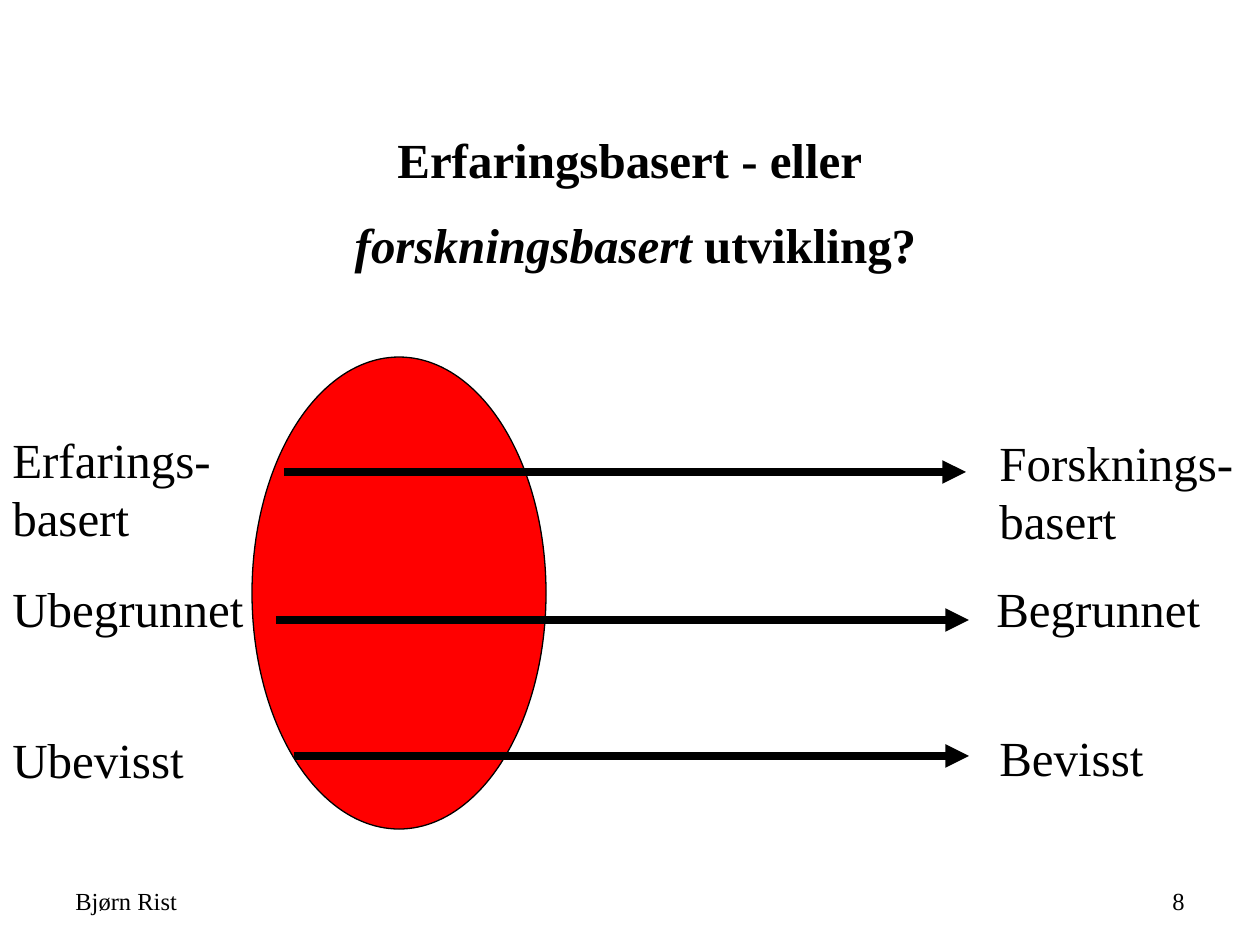
"""Build the slide on experience-based versus research-based development."""
from lxml.etree import SubElement
from pptx import Presentation
from pptx.dml.color import RGBColor
from pptx.enum.shapes import MSO_CONNECTOR as Conn, MSO_SHAPE as Shape
from pptx.enum.text import MSO_ANCHOR as Anchor, PP_ALIGN as Align
from pptx.oxml.ns import qn
from pptx.util import Pt

PX = 914400 // 126
FONT = "Times New Roman"
BLACK, RED = "000000", "FF0000"
TITLE = [
    [("Erfaringsbasert - eller ", False)],
    [("forskningsbasert ", True), ("utvikling?", False)],
]
LABELS = [
    ("Erfarings-basert", 0, 423, 252, 130),
    ("Ubegrunnet", 0, 572, 294, 72),
    ("Ubevisst", 0, 723, 294, 72),
    ("Forsknings-basert", 987, 426, 294, 130),
    ("Begrunnet", 984, 572, 294, 72),
    ("Bevisst", 987, 721, 294, 72),
]
ARROWS = [(284, 966, 472), (276, 969, 620), (294, 969, 756)]
FOOTS = [("Bjørn Rist", 63, Align.LEFT), ("8", 903, Align.RIGHT)]


def px(*nums):
    return [n * PX for n in nums]


def color(code):
    return RGBColor.from_string(code)


def style(run, size, bold=False, ital=False):
    font = run.font
    font.name, font.size = FONT, Pt(size)
    font.bold, font.italic = bold, ital
    font.color.rgb = color(BLACK)


def label(slide, text, box, size, align=Align.LEFT, anchor=Anchor.TOP):
    frame = slide.shapes.add_textbox(*px(*box)).text_frame
    frame.word_wrap = True
    frame.vertical_anchor = anchor
    frame.text = text
    para = frame.paragraphs[0]
    para.alignment = align
    style(para.runs[0], size)


def title(slide):
    head = slide.shapes.title
    head.left, head.top, head.width, head.height = px(95, 123, 1081, 160)
    frame = head.text_frame
    frame.word_wrap = True
    frame.vertical_anchor = Anchor.TOP
    for i, parts in enumerate(TITLE):
        para = frame.add_paragraph() if i else frame.paragraphs[0]
        para.alignment = Align.CENTER
        para.space_before = Pt(15 if i else 0)
        for text, ital in parts:
            run = para.add_run()
            run.text = text
            style(run, 28, True, ital)


def oval(slide):
    shape = slide.shapes.add_shape(Shape.OVAL, *px(252, 357, 294, 472))
    shape.shadow.inherit = False
    shape.fill.solid()
    shape.fill.fore_color.rgb = color(RED)
    shape.line.color.rgb = color(BLACK)
    shape.line.width = Pt(0.75)


def arrow(slide, start, end, y):
    link = slide.shapes.add_connector(Conn.STRAIGHT, *px(start, y, end, y))
    link.line.color.rgb = color(BLACK)
    link.line.width = Pt(4.5)
    SubElement(link.line._get_or_add_ln(), qn("a:tailEnd"), type="triangle")
    SubElement(link._element.spPr, qn("a:effectLst"))


def main():
    deck = Presentation()
    deck.slide_width, deck.slide_height = px(1260, 945)
    slide = deck.slides.add_slide(deck.slide_layouts[5])
    title(slide)
    oval(slide)
    for text, *box in LABELS:
        label(slide, text, box, 28)
    for ends in ARROWS:
        arrow(slide, *ends)
    for text, left, align in FOOTS:
        label(slide, text, (left, 876, 294, 50), 14, align, Anchor.MIDDLE)
    deck.save("out.pptx")


if __name__ == "__main__":
    main()
